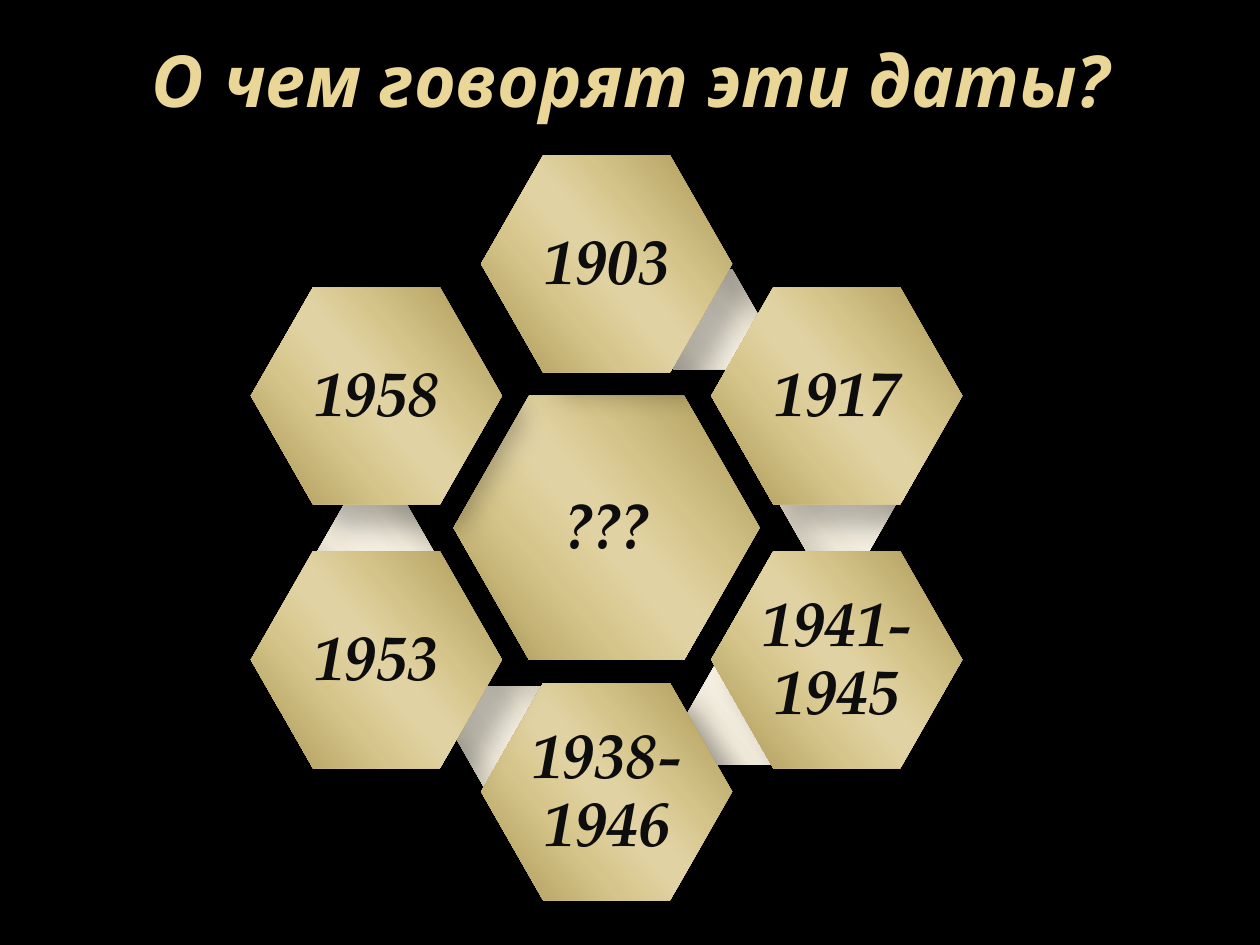
from lxml import etree
from pptx import Presentation
from pptx.dml.color import RGBColor
from pptx.enum.shapes import MSO_SHAPE
from pptx.enum.text import MSO_ANCHOR, PP_ALIGN
from pptx.oxml import parse_xml
from pptx.oxml.ns import nsdecls, qn
from pptx.util import Cm, Pt

HEXAGON = MSO_SHAPE.HEXAGON
MIDDLE = MSO_ANCHOR.MIDDLE
CENTER = PP_ALIGN.CENTER

BLACK = RGBColor(0x00, 0x00, 0x00)
INK = RGBColor(0x0D, 0x0D, 0x0D)
CREAM = RGBColor(0xEA, 0xD6, 0x96)

STOPS = (0, 33, 47, 53, 68, 100)
GOLD = [RGBColor.from_string(c) for c in
        ("A59452", "D5C489", "E1D2A3", "E1D2A3", "D6C58A", "A59452")]
PALE = [RGBColor.from_string(c) for c in
        ("BEB8A9", "F0EADA", "F3EEE0", "F3EEE0", "F0EADA", "BEB8A9")]
ANGLE = 139

TITLE = "О чем говорят эти даты?"
CORE = "???"
# date, (column, row) step from the core, offset of its link from the core in cm
DATES = [
    ("1903", (0, -2), (1.94, -4.2)),
    ("1917", (1, -1), (4.66, -0.47)),
    ("1941-1945", (1, 1), (2.78, 3.77)),
    ("1938-1946", (0, 2), (-1.89, 4.2)),
    ("1953", (-1, 1), (-4.66, 0.47)),
    ("1958", (-1, -1), None),
]

# centimetres
MID_X, MID_Y = 12.23, 10.64
STEP_X, STEP_Y = 4.64, 2.66
CORE_SIZE = (6.17, 5.33)
DATE_SIZE = (5.06, 4.37)
LINK_SIZE = (2.34, 2.01)


def set_text(shape, text, font, size, color):
    frame = shape.text_frame
    frame.word_wrap = True
    frame.vertical_anchor = MIDDLE
    par = frame.paragraphs[0]
    par.text = text
    par.alignment = CENTER
    style = par.runs[0].font
    style.name, style.size = font, Pt(size)
    style.bold = style.italic = True
    style.color.rgb = color
    return frame


def set_grad(shape, colors):
    """Fill with a linear gradient of six stops."""
    shape.fill.background()
    old = shape._element.spPr.find(qn("a:noFill"))
    stops = "".join(
        f'<a:gs pos="{pos * 1000}"><a:srgbClr val="{color}"/></a:gs>'
        for pos, color in zip(STOPS, colors))
    grad = parse_xml(
        f'<a:gradFill {nsdecls("a")} rotWithShape="1"><a:gsLst>{stops}</a:gsLst>'
        f'<a:lin ang="{ANGLE * 60000}" scaled="0"/></a:gradFill>')
    old.getparent().replace(old, grad)


def add_shadow(shape):
    """Cast a soft shadow down to the right."""
    effects = shape._element.spPr.find(qn("a:effectLst"))
    outer = etree.SubElement(
        effects, qn("a:outerShdw"), blurRad=str(Pt(15)), dist=str(Pt(18)),
        dir=str(45 * 60000), algn="tl", rotWithShape="0")
    color = etree.SubElement(outer, qn("a:srgbClr"), val=str(BLACK))
    etree.SubElement(color, qn("a:alpha"), val="26000")


def add_hex(slide, shift, size, colors):
    """Add a hexagon whose centre is shifted from the core's centre."""
    wide, high = size
    shape = slide.shapes.add_shape(
        HEXAGON, Cm(MID_X + shift[0] - wide / 2), Cm(MID_Y + shift[1] - high / 2),
        Cm(wide), Cm(high))
    shape.adjustments[0] = 0.286
    shape.adjustments[1] = 1.1547
    shape.shadow.inherit = False
    shape.line.fill.background()
    set_grad(shape, colors)
    return shape


def add_cell(slide, text, shift, size):
    """Add a gold hexagon with a shadow and a label."""
    cell = add_hex(slide, shift, size, GOLD)
    add_shadow(cell)
    frame = set_text(cell, text, "TeX Gyre Pagella", 36, INK)
    frame.margin_left = frame.margin_right = Cm(0.13)
    frame.margin_top = frame.margin_bottom = Cm(0.13)
    frame.paragraphs[0].line_spacing = 0.9


def main():
    deck = Presentation()
    deck.slide_width, deck.slide_height = Cm(25.4), Cm(19.05)
    slide = deck.slides.add_slide(deck.slide_layouts[6])
    slide.background.fill.solid()
    slide.background.fill.fore_color.rgb = BLACK

    title = slide.shapes.add_textbox(Cm(1.3), Cm(0), Cm(22.86), Cm(3.18))
    set_text(title, TITLE, "Noto Sans", 41, CREAM)

    add_cell(slide, CORE, (0, 0), CORE_SIZE)
    for date, (col, row), link in DATES:
        if link:
            add_hex(slide, link, LINK_SIZE, PALE)
        add_cell(slide, date, (col * STEP_X, row * STEP_Y), DATE_SIZE)

    deck.save("out.pptx")


if __name__ == "__main__":
    main()
